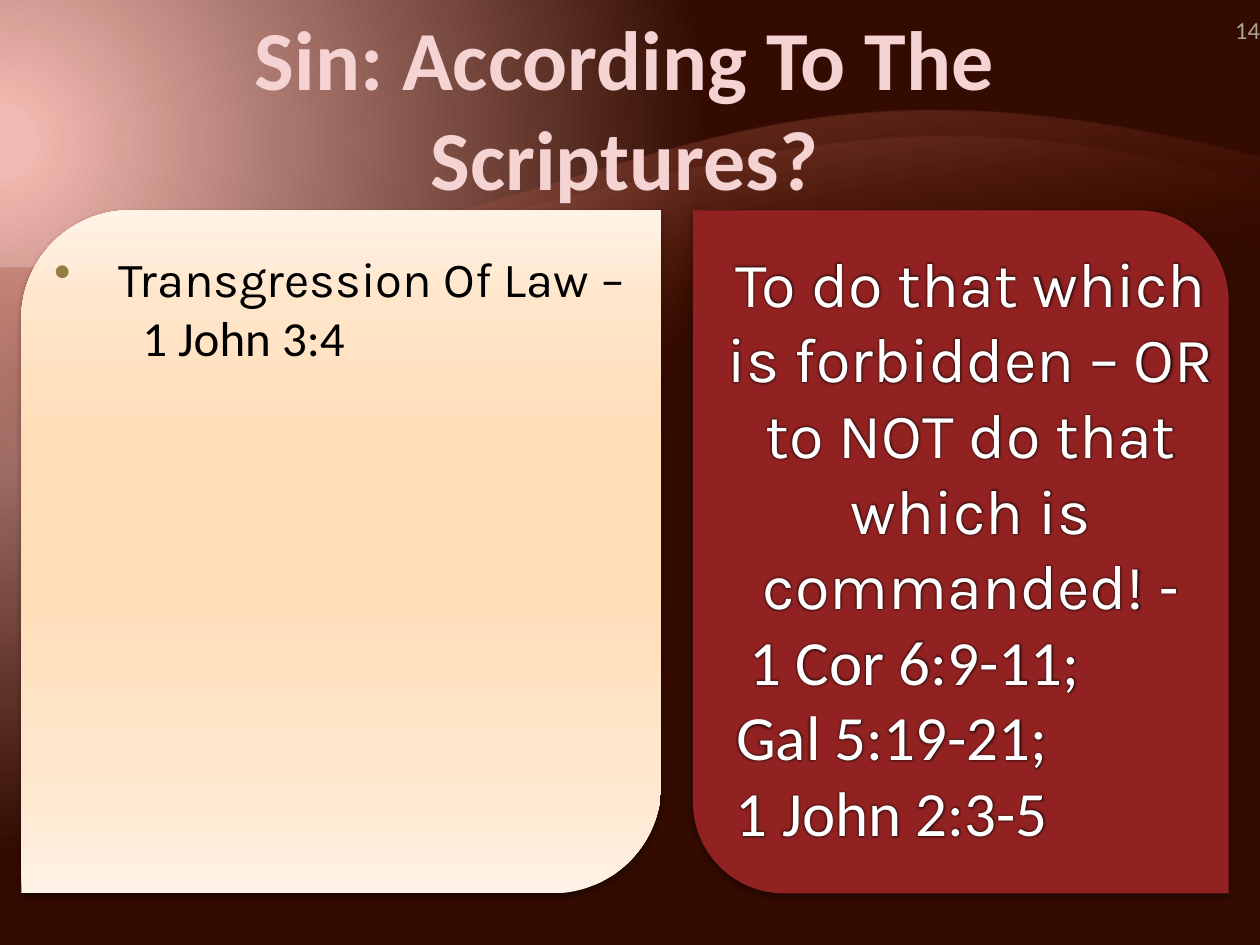
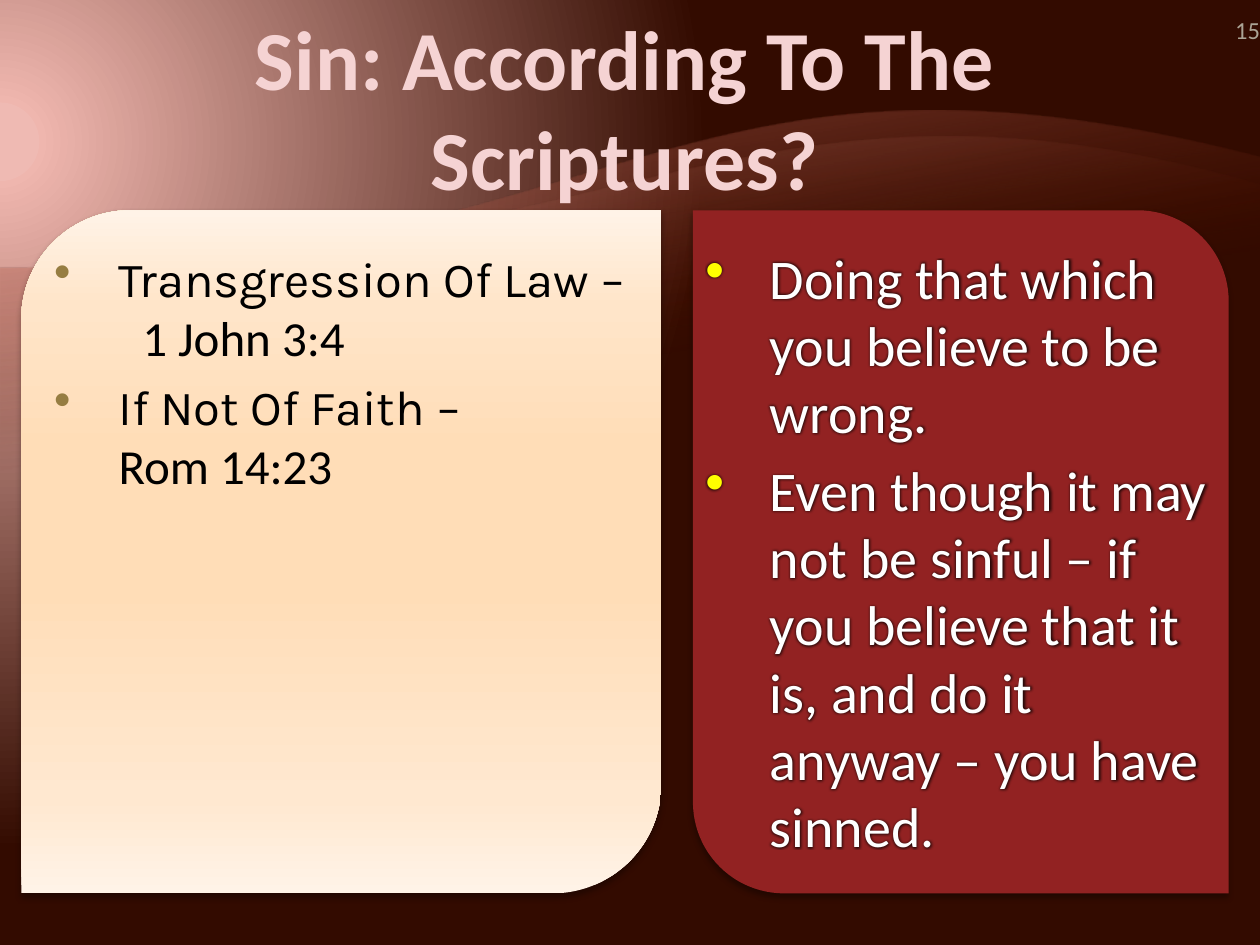
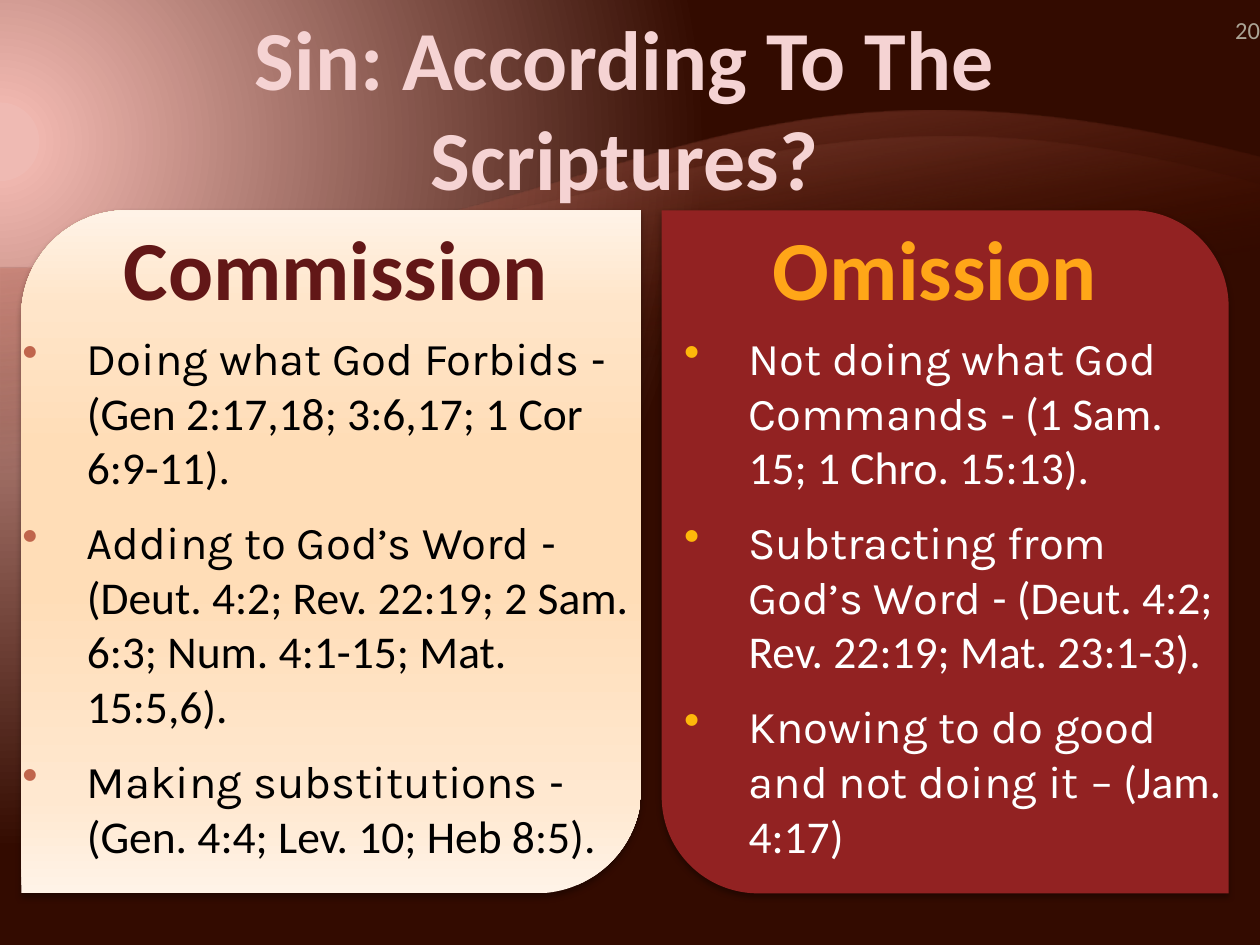
from dataclasses import dataclass
from typing import NamedTuple

from pptx import Presentation
from pptx.dml.color import RGBColor as Rgb
from pptx.enum.shapes import MSO_SHAPE as Kind
from pptx.enum.text import MSO_ANCHOR as Anchor, PP_ALIGN as Align
from pptx.oxml import parse_xml as parse
from pptx.oxml.ns import nsdecls, qn
from pptx.util import Cm, Pt

HUES = {
    "title": "F5D3D3", "page": "ABA495", "red": "922222", "cream": "FFF3E7",
    "black": "000000", "white": "FFFFFF", "olive": "967D42", "yellow": "FFFF00",
    "rust": "C0654C", "gold": "FEB80A", "wine": "621717", "amber": "FFA618",
}
NIGHT = [(5, "EFBAB3"), (5, "EFB6AE"), (90, "330B00")]
PEACH = [(0, "FFF3E7"), (14, "FFE8D0"), (45, "FFDDB7"),
         (65, "FFDDB7"), (86, "FFE5C9"), (100, "FFF3E7")]
AMBER = [(0, "FFD196"), (75, "FFA618"), (100, "C38B00")]
GLOW = '<a:path path="circle"><a:fillToRect l="20000" t="30000" r="135000" b="100000"/></a:path>'
WIDE, HIGH, HANG = 25.4, 19.05, 1.3
TOP, TALL = 4.24, 13.77


class Box(NamedTuple):
    x: float
    y: float
    w: float
    h: float

    def cm(self) -> list:
        return [Cm(n) for n in self]


@dataclass
class Para:
    lead: str = ""
    cite: str = ""
    mark: bool = True
    left: float = HANG
    right: float = 0
    gap: float | None = None


@dataclass
class Wave:
    bend: tuple
    end: float
    base: float
    hue: str
    alpha: int


WAVES = [
    Wave(((12.7, 5.41), (13.56, 0.13)), 3.18, 18.62, "EB9084", 55),
    Wave(((12.7, 5.41), (15.19, 0.79)), 3.73, 16.18, "F0B4AC", 30),
]


def line(angle: int) -> str:
    return f'<a:lin ang="{angle * 60000}" scaled="0"/>'


def paint(node, stops: list, way: str) -> None:
    marks = ""
    for at, hue, *alpha in stops:
        veil = "".join(f'<a:alpha val="{n * 1000}"/>' for n in alpha)
        marks += f'<a:gs pos="{at * 1000}"><a:srgbClr val="{hue}">{veil}</a:srgbClr></a:gs>'
    fill = parse(f'<a:gradFill {nsdecls("a")} rotWithShape="1">'
                 f"<a:gsLst>{marks}</a:gsLst>{way}</a:gradFill>")
    old = next(node.iter(qn("a:solidFill")))
    old.getparent().replace(old, fill)


def plain(shape, hue: str) -> None:
    shape.fill.solid()
    shape.fill.fore_color.rgb = Rgb.from_string(HUES[hue])
    shape.line.fill.background()
    shape.shadow.inherit = False


def draw_wave(slide, wave: Wave) -> None:
    start, stop = (0, 5.41), (WIDE, wave.end)
    knots = (start, *wave.bend, stop)
    curve = []
    for step in range(1, 61):
        t = step / 60
        mix = ((1 - t) ** 3, 3 * t * (1 - t) ** 2, 3 * t * t * (1 - t), t ** 3)
        curve.append(tuple(Cm(sum(m * k[i] for m, k in zip(mix, knots))) for i in (0, 1)))
    pen = slide.shapes.build_freeform(Cm(0), Cm(start[1]))
    pen.add_line_segments([*curve, (Cm(WIDE), Cm(wave.base)), (Cm(0), Cm(wave.base))])
    shape = pen.convert_to_shape()
    plain(shape, "red")
    paint(shape.element, [(65, "6B1700", 0), (100, wave.hue, wave.alpha)], line(260))


def panel(slide, x: float, width: float, hue: str, turns: tuple) -> object:
    box = Box(x, TOP, width, TALL)
    shape = slide.shapes.add_shape(Kind.ROUND_2_DIAG_RECTANGLE, *box.cm())
    plain(shape, hue)
    for i, turn in enumerate(turns):
        shape.adjustments[i] = turn
    next(shape.element.iter(qn("a:effectLst"))).append(parse(
        f'<a:outerShdw {nsdecls("a")} blurRad="{Pt(3.5)}" dist="{Pt(2.2)}" dir="5400000" '
        f'rotWithShape="0"><a:srgbClr val="{HUES["black"]}"><a:alpha val="32000"/>'
        "</a:srgbClr></a:outerShdw>"))
    return shape


def put(slide, box: Box, paras: list, *, size: int, hue: str, bold: bool = False,
        align=Align.LEFT, gap: float = 0, dot: str = "", halo: bool = False,
        ends: list | None = None, anchor=Anchor.TOP, inset: float = 0.25) -> None:
    shape = slide.shapes.add_textbox(*box.cm())
    frame = shape.text_frame
    frame.word_wrap = True
    frame.vertical_anchor = anchor
    frame.margin_right = Cm(inset)
    for i, item in enumerate(paras):
        para = frame.add_paragraph() if i else frame.paragraphs[0]
        para.alignment = align
        para.space_before = Pt(gap if item.gap is None else item.gap)
        for text, face in ((item.lead, "Karla"), (item.cite, "Calibri")):
            if text:
                run = para.add_run()
                run.text = text
                font = run.font
                font.name, font.size, font.bold = face, Pt(size), bold
                font.color.rgb = Rgb.from_string(HUES[hue])
    for node, item in zip(shape.element.iter(qn("a:p")), paras):
        props = node.get_or_add_pPr()
        if item.right:
            props.set("marR", str(Cm(item.right)))
        if dot:
            props.set("marL", str(Cm(item.left)))
            props.set("indent", str(Cm(-HANG if item.mark else 0)))
        if dot and item.mark:
            props.append(parse(f'<a:buClr {nsdecls("a")}><a:srgbClr val="{HUES[dot]}"/></a:buClr>'))
            props.append(parse(f'<a:buChar {nsdecls("a")} char="•"/>'))
    if halo:
        for fill in shape.element.iter(qn("a:solidFill")):
            fill.addnext(parse(
                f'<a:effectLst {nsdecls("a")}><a:glow rad="{Pt(3)}"><a:srgbClr '
                f'val="{HUES["black"]}"><a:alpha val="75000"/></a:srgbClr></a:glow></a:effectLst>'))
    if ends:
        paint(shape.element, ends, line(90))


def stage(deck, page: str, x: float, left: float, right: float):
    slide = deck.slides.add_slide(deck.slide_layouts[6])
    for wave in WAVES:
        draw_wave(slide, wave)
    panel(slide, x, right, "red", (0, 0.17))
    pale = panel(slide, 0.43, left, "cream", (0.17, 0))
    paint(pale.element, PEACH, line(270))
    put(slide, Box(23.93, 0, 1.47, 1.02), [Para(cite=page)], size=14, hue="page",
        align=Align.RIGHT, anchor=Anchor.BOTTOM, inset=0)
    put(slide, Box(0.84, 0, 23.5, 4.37), [Para(cite="Sin: According To The Scriptures?")],
        size=48, hue="title", bold=True, align=Align.CENTER)
    return slide


LAW = [Para("Transgression Of Law ", "–"),
       Para(cite="1 John 3:4", mark=False, left=1.78, gap=0)]
FAITH = [Para("If Not Of Faith ", "–"),
         Para(cite="Rom 14:23", mark=False, gap=0)]
FORBID = [
    Para("To do that which is forbidden – OR to NOT do that which is commanded! ", "-"),
    Para(cite="1 Cor 6:9-11;", right=2.26, gap=0),
    Para(cite="Gal 5:19-21;", right=3.18, gap=0),
    Para(cite="1 John 2:3-5", gap=0),
]
DOUBT = [
    Para(cite="Doing that which you believe to be wrong."),
    Para(cite="Even though it may not be sinful – if you believe that it is, "
              "and do it anyway – you have sinned."),
]
DONE = [
    Para("Doing what God Forbids ", "- (Gen 2:17,18; 3:6,17; 1 Cor 6:9-11)."),
    Para("Adding to God’s Word ",
         "- (Deut. 4:2; Rev. 22:19; 2 Sam. 6:3; Num. 4:1-15; Mat. 15:5,6)."),
    Para("Making substitutions ", "- (Gen. 4:4; Lev. 10; Heb 8:5)."),
]
UNDONE = [
    Para("Not doing what God Commands ", "- (1 Sam. 15; 1 Chro. 15:13)."),
    Para("Subtracting from God’s Word ", "- (Deut. 4:2; Rev. 22:19; Mat. 23:1-3)."),
    Para("Knowing to do good and not doing it ", "– (Jam. 4:17)"),
]


def main() -> None:
    deck = Presentation()
    deck.slide_width, deck.slide_height = Cm(WIDE), Cm(HIGH)
    master = deck.slide_master
    master.background.fill.solid()
    master.background.fill.fore_color.rgb = Rgb.from_string(HUES["red"])
    paint(next(master.element.iter(qn("p:bgPr"))), NIGHT, GLOW)

    law = stage(deck, "14", 13.97, 12.9, 10.8)
    put(law, Box(0.84, 4.88, 12.27, 2.64), LAW, size=28, hue="black", gap=6, dot="olive")
    put(law, Box(14.17, 4.8, 10.8, 12.57), FORBID, size=36, hue="white", gap=6,
        align=Align.CENTER, halo=True)

    faith = stage(deck, "15", 13.97, 12.9, 10.8)
    put(faith, Box(0.84, 4.88, 12.27, 5.26), LAW + FAITH, size=28, hue="black",
        gap=6, dot="olive")
    put(faith, Box(13.97, 4.78, 10.8, 12.78), DOUBT, size=32, hue="white", gap=6,
        dot="yellow", halo=True)

    kinds = stage(deck, "20", 13.34, 12.5, 11.43)
    put(kinds, Box(0.2, 6.53, 12.9, 11.25), DONE, size=26, hue="black", gap=11.7, dot="rust")
    put(kinds, Box(13.54, 6.53, 11.43, 11.25), UNDONE, size=26, hue="white", gap=11.7, dot="gold")
    put(kinds, Box(0.64, TOP, 12.27, 2.31), [Para(cite="Commission")], size=48,
        hue="wine", bold=True, align=Align.CENTER)
    put(kinds, Box(13.13, TOP, 11.43, 2.31), [Para(cite="Omission")], size=48,
        hue="amber", bold=True, align=Align.CENTER, ends=AMBER)
    deck.save("out.pptx")


if __name__ == "__main__":
    main()
